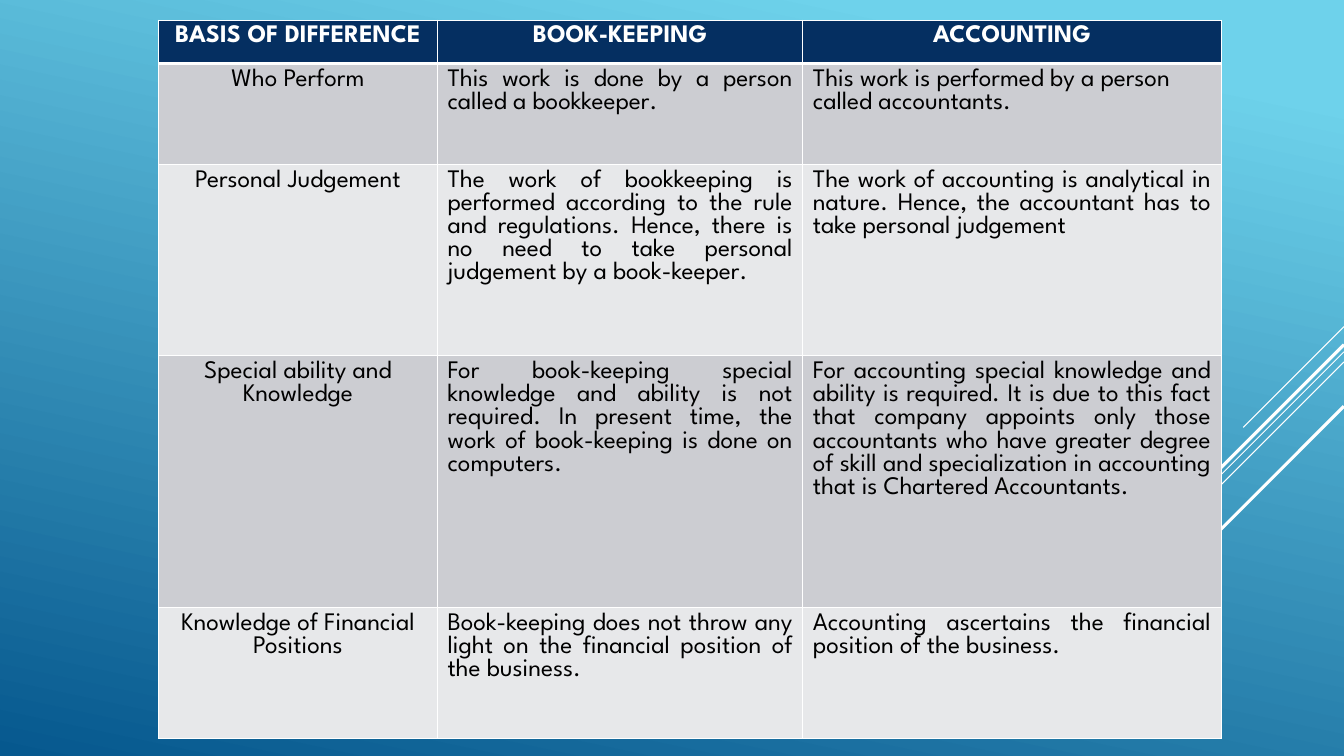
from lxml import etree
from pptx import Presentation
from pptx.dml.color import RGBColor
from pptx.enum import shapes, text
from pptx.oxml import ns
from pptx.util import Pt

ROWS = [
    ("BASIS OF DIFFERENCE", "BOOK-KEEPING", "ACCOUNTING"),
    ("Who Perform",
     "This work is done by a person called a bookkeeper.",
     "This work is performed by a person called accountants."),
    ("Personal Judgement",
     "The work of bookkeeping is performed according to the rule and regulations. "
     "Hence, there is no need to take personal judgement by a book-keeper.",
     "The work of accounting is analytical in nature. Hence, the accountant has to "
     "take personal judgement"),
    ("Special ability and Knowledge",
     "For book-keeping special knowledge and ability is not required. In present time, "
     "the work of book-keeping is done on computers.",
     "For accounting special knowledge and ability is required. It is due to this fact "
     "that company appoints only those accountants who have greater degree of skill and "
     "specialization in accounting that is Chartered Accountants."),
    ("Knowledge of Financial Positions",
     "Book-keeping does not throw any light on the financial position of the business.",
     "Accounting ascertains the financial position of the business."),
]
LEFT, TOP = 113.2, 14.4
WIDTHS = (199.3, 261, 298.8)
HEIGHTS = (31, 72, 136.8, 180, 93.6)
# Diagonal stripes: height at the right edge, run to the left, line width
STRIPES = [(233.3, 72, 0.75), (251.3, 234.7, 0.75), (258.5, 149, 0.75),
           (246.2, 137.5, 2.25), (290.2, 100, 2.25)]

WIDE, HIGH = 960, 540
FONT, SIZE = "League Spartan", 18
WHITE = RGBColor(0xFF, 0xFF, 0xFF)
BLACK = RGBColor(0, 0, 0)
NAVY = RGBColor(0x05, 0x2F, 0x61)
GREY = RGBColor(0xCC, 0xCD, 0xD2)
PALE = RGBColor(0xE7, 0xE8, 0xEA)
SKY = RGBColor(0x6E, 0xD2, 0xEB)
DEEP = RGBColor(0x06, 0x58, 0x8E)


def paint_back(slide):
    fill = slide.background.fill
    fill.gradient()
    fill.gradient_angle = 258
    for stop, (place, color) in zip(fill.gradient_stops, [(0.1, SKY), (1, DEEP)]):
        stop.position = place
        stop.color.rgb = color


def add_stripe(slide, y, run, width):
    line = slide.shapes.add_connector(
        shapes.MSO_CONNECTOR.STRAIGHT, Pt(WIDE), Pt(y), Pt(WIDE - run), Pt(y + run))
    line.line.color.rgb = WHITE
    line.line.width = Pt(width)
    etree.SubElement(line._element.spPr, ns.qn("a:effectLst"))


def set_edges(cell, row):
    """Draw white cell borders, thick between the header and the body."""
    props = cell._tc.get_or_add_tcPr()
    widths = {"L": 1, "R": 1, "T": 3 if row == 1 else 1, "B": 3 if row == 0 else 1}
    for spot, (side, width) in enumerate(widths.items()):
        edge = etree.Element(ns.qn("a:ln" + side), w=str(Pt(width)))
        fill = etree.SubElement(edge, ns.qn("a:solidFill"))
        etree.SubElement(fill, ns.qn("a:srgbClr"), val=str(WHITE))
        props.insert(spot, edge)


def align_of(row, col):
    if row == 0 or col == 0:
        return text.PP_ALIGN.CENTER
    if (row, col) == (1, 2):
        return text.PP_ALIGN.LEFT
    return text.PP_ALIGN.JUSTIFY


def fill_cell(cell, words, row, col):
    head = row == 0
    cell.fill.solid()
    cell.fill.fore_color.rgb = NAVY if head else GREY if row % 2 else PALE
    set_edges(cell, row)
    para = cell.text_frame.paragraphs[0]
    para.alignment = align_of(row, col)
    run = para.add_run()
    run.text = words
    run.font.name = FONT
    run.font.size = Pt(SIZE)
    run.font.bold = head
    run.font.color.rgb = WHITE if head else BLACK


def add_grid(slide):
    grid = slide.shapes.add_table(
        len(ROWS), len(WIDTHS), Pt(LEFT), Pt(TOP),
        Pt(sum(WIDTHS)), Pt(sum(HEIGHTS))).table
    for col, width in zip(grid.columns, WIDTHS):
        col.width = Pt(width)
    for row, height in zip(grid.rows, HEIGHTS):
        row.height = Pt(height)
    for r, row in enumerate(ROWS):
        for c, words in enumerate(row):
            fill_cell(grid.cell(r, c), words, r, c)


def main():
    deck = Presentation()
    deck.slide_width, deck.slide_height = Pt(WIDE), Pt(HIGH)
    slide = deck.slides.add_slide(deck.slide_layouts[6])
    paint_back(slide)
    for stripe in STRIPES:
        add_stripe(slide, *stripe)
    add_grid(slide)
    deck.save("out.pptx")


if __name__ == "__main__":
    main()
